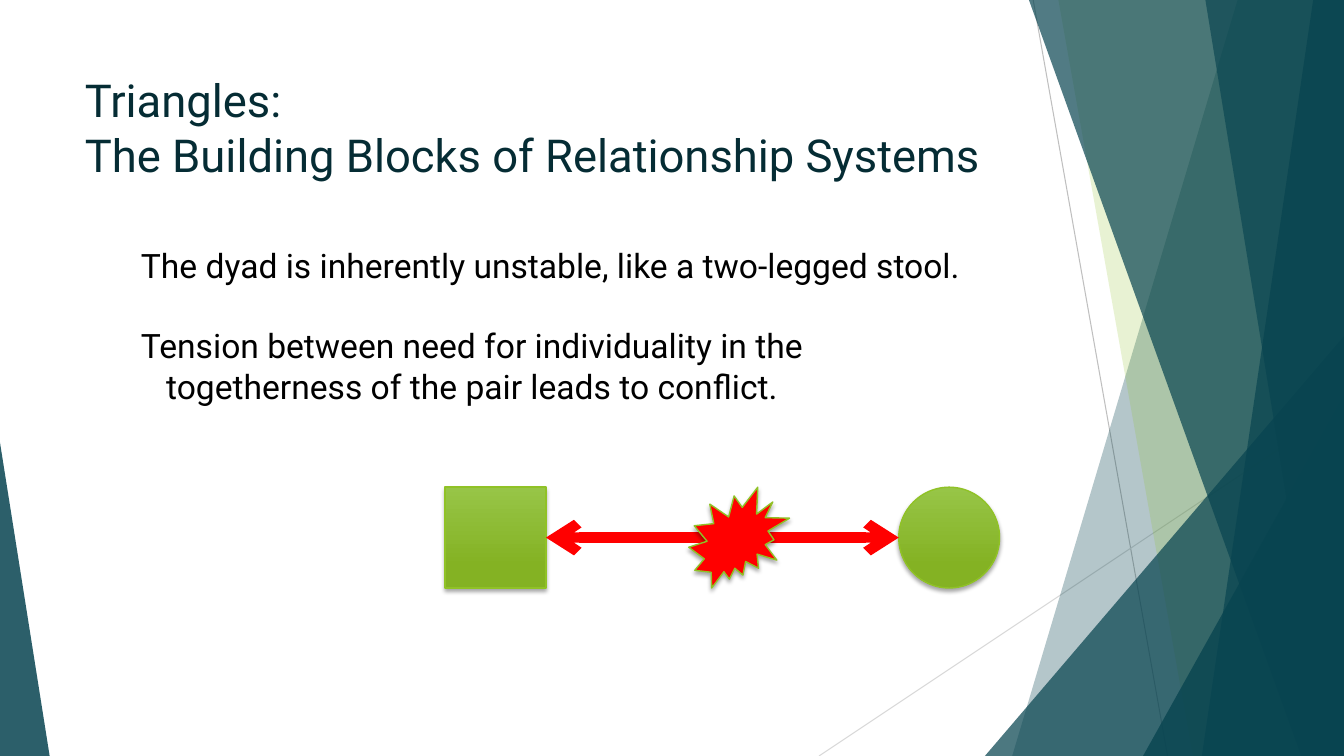
from dataclasses import dataclass
from typing import Optional

from lxml import etree
from pptx import Presentation
from pptx.dml.color import RGBColor
from pptx.enum.shapes import MSO_CONNECTOR, MSO_SHAPE
from pptx.enum.text import MSO_ANCHOR, MSO_AUTO_SIZE, PP_ALIGN
from pptx.oxml.ns import qn
from pptx.util import Pt

RECTANGLE, OVAL = MSO_SHAPE.RECTANGLE, MSO_SHAPE.OVAL
TRIANGLE, BURST = MSO_SHAPE.ISOSCELES_TRIANGLE, MSO_SHAPE.EXPLOSION2
STRAIGHT = MSO_CONNECTOR.STRAIGHT
RIGHT_SIDE = 3

TEAL = RGBColor(0x08, 0x44, 0x50)
DARK_TEAL = RGBColor(0x05, 0x2C, 0x34)
GREEN = RGBColor(0x90, 0xC2, 0x26)
LIGHT_GREEN = RGBColor(0x97, 0xC5, 0x47)
DEEP_GREEN = RGBColor(0x84, 0xB2, 0x23)
RED = RGBColor(0xFF, 0x00, 0x00)
BLACK = RGBColor(0x00, 0x00, 0x00)
GREY = RGBColor(0xBF, 0xBF, 0xBF)
PALE_GREY = RGBColor(0xD9, 0xD9, 0xD9)

SLIDE_WIDTH, SLIDE_HEIGHT = 960, 540
FIGURE_SIZE, FIGURE_TOP = 72, 348
FIGURE_MIDDLE = FIGURE_TOP + FIGURE_SIZE / 2
FRAME_FORMAT = {
    "word_wrap": True,
    "auto_size": MSO_AUTO_SIZE.NONE,
    "vertical_anchor": MSO_ANCHOR.TOP,
}


@dataclass(frozen=True)
class Facet:
    """Area from a slanted left edge to the right edge of the slide."""
    top_left: float
    bottom_left: float
    opacity: int
    color: RGBColor = TEAL


@dataclass(frozen=True)
class Corner:
    """Right-angled triangle standing on the bottom edge of the slide."""
    left: float
    top: float
    width: float
    apex: float
    opacity: int


@dataclass(frozen=True)
class Figure:
    kind: MSO_SHAPE
    left: float
    color: Optional[RGBColor] = None


@dataclass(frozen=True)
class BodyLine:
    text: str
    space_before: float = 0
    indent: float = 0


BACKDROP = (
    Facet(884, 723, 30),
    Facet(756, 852, 20, GREEN),
    Corner(703.5, 240, 256.5, 1, 72),
    Facet(735, 929.5, 70),
    Facet(938, 858.5, 70),
    Facet(861, 949, 65),
    Corner(816.5, 283, 143.5, 1, 80),
    Corner(0, 316, 35.5, 0, 85),
)
SQUARE = Figure(RECTANGLE, 318)
CIRCLE = Figure(OVAL, 642)
CONFLICT = Figure(BURST, 492, RED)
TITLE = "Triangles:\vThe Building Blocks of Relationship Systems"
BODY = (
    BodyLine("The dyad is inherently unstable, like a two-legged stool."),
    BodyLine("Tension between need for individuality in the", space_before=28.5),
    BodyLine("togetherness of the pair leads to conflict.", indent=18),
)


def add_line(slide, start: tuple, end: tuple, color: RGBColor, width: float):
    connector = slide.shapes.add_connector(STRAIGHT, *map(Pt, start + end))
    connector.line.color.rgb = color
    connector.line.width = Pt(width)
    etree.SubElement(connector._element.spPr, qn("a:effectLst"))
    return connector


def add_backdrop_part(slide, part) -> None:
    if isinstance(part, Facet):
        builder = slide.shapes.build_freeform(Pt(part.top_left), 0, scale=1.0)
        corners = ((SLIDE_WIDTH, 0), (SLIDE_WIDTH, SLIDE_HEIGHT),
                   (part.bottom_left, SLIDE_HEIGHT))
        builder.add_line_segments([(Pt(x), Pt(y)) for x, y in corners], close=True)
        shape, color = builder.convert_to_shape(), part.color
    else:
        shape = slide.shapes.add_shape(
            TRIANGLE, Pt(part.left), Pt(part.top),
            Pt(part.width), Pt(SLIDE_HEIGHT - part.top))
        shape.adjustments[0] = part.apex
        color = TEAL
    shape.shadow.inherit = False
    shape.line.fill.background()
    shape.fill.solid()
    shape.fill.fore_color.rgb = color
    color_element = shape._element.spPr.find(f"{qn('a:solidFill')}/{qn('a:srgbClr')}")
    etree.SubElement(color_element, qn("a:alpha"), val=str(part.opacity * 1000))


def add_soft_shadow(shape) -> None:
    shape.shadow.inherit = False
    effects = shape._element.spPr.find(qn("a:effectLst"))
    shadow = etree.SubElement(
        effects, qn("a:outerShdw"), blurRad=str(Pt(3)), dist=str(Pt(2)),
        dir="5400000", rotWithShape="0")
    color = etree.SubElement(shadow, qn("a:srgbClr"), val=str(BLACK))
    etree.SubElement(color, qn("a:alpha"), val="35000")


def add_figure(slide, figure: Figure):
    shape = slide.shapes.add_shape(
        figure.kind, Pt(figure.left), Pt(FIGURE_TOP), Pt(FIGURE_SIZE), Pt(FIGURE_SIZE))
    if figure.color is not None:
        shape.fill.solid()
        shape.fill.fore_color.rgb = figure.color
    else:
        shape.fill.gradient()
        shape.fill.gradient_angle = 270
        stops = ((0, LIGHT_GREEN), (0.78, DEEP_GREEN))
        for stop, (position, color) in zip(shape.fill.gradient_stops, stops):
            stop.position = position
            stop.color.rgb = color
    shape.line.color.rgb = GREEN
    shape.line.width = Pt(1)
    add_soft_shadow(shape)
    return shape


def add_tension_arrow(slide, square) -> None:
    arrow = add_line(slide, (SQUARE.left + FIGURE_SIZE, FIGURE_MIDDLE),
                     (CIRCLE.left, FIGURE_MIDDLE), RED, 7.25)
    arrow.begin_connect(square, RIGHT_SIDE)
    line = arrow._element.spPr.find(qn("a:ln"))
    for end in ("a:headEnd", "a:tailEnd"):
        etree.SubElement(line, qn(end), type="arrow")


def place_placeholder(slide, placeholder, box: tuple):
    """Move a placeholder in front of the backdrop and format its frame."""
    slide.shapes._spTree.append(placeholder._element)
    for name, value in zip(("left", "top", "width", "height"), box):
        setattr(placeholder, name, Pt(value))
    for name, value in FRAME_FORMAT.items():
        setattr(placeholder.text_frame, name, value)
    return placeholder.text_frame


def format_paragraph(paragraph, size: float, color: RGBColor, space_before: float = 0) -> None:
    paragraph_format = {"alignment": PP_ALIGN.LEFT, "line_spacing": 1.0,
                        "space_before": Pt(space_before), "space_after": Pt(0)}
    for name, value in paragraph_format.items():
        setattr(paragraph, name, value)
    for run in paragraph.runs:
        for name, value in {"name": "Roboto", "size": Pt(size)}.items():
            setattr(run.font, name, value)
        run.font.color.rgb = color


def fill_title(slide) -> None:
    frame = place_placeholder(slide, slide.shapes.title, (53.5, 48, 677, 104))
    frame.text = TITLE
    format_paragraph(frame.paragraphs[0], 32.4, DARK_TEAL)


def fill_body(slide) -> None:
    frame = place_placeholder(slide, slide.placeholders[1], (93.5, 171.5, 746.5, 124))
    frame.text = "\n".join(line.text for line in BODY)
    for paragraph, line in zip(frame.paragraphs, BODY):
        properties = paragraph._p.get_or_add_pPr()
        properties.set("marL", str(Pt(line.indent)))
        properties.set("indent", "0")
        etree.SubElement(properties, qn("a:buNone"))
        format_paragraph(paragraph, 24, BLACK, line.space_before)


def main() -> None:
    presentation = Presentation()
    presentation.slide_width, presentation.slide_height = Pt(SLIDE_WIDTH), Pt(SLIDE_HEIGHT)
    slide = presentation.slides.add_slide(presentation.slide_layouts[1])
    add_line(slide, (738, 0), (834, SLIDE_HEIGHT), GREY, 0.75)
    add_line(slide, (SLIDE_WIDTH, 290), (585, SLIDE_HEIGHT), PALE_GREY, 0.75)
    for part in BACKDROP:
        add_backdrop_part(slide, part)
    fill_title(slide)
    add_figure(slide, CIRCLE)
    square = add_figure(slide, SQUARE)
    fill_body(slide)
    add_tension_arrow(slide, square)
    add_figure(slide, CONFLICT)
    presentation.save("out.pptx")


if __name__ == "__main__":
    main()
